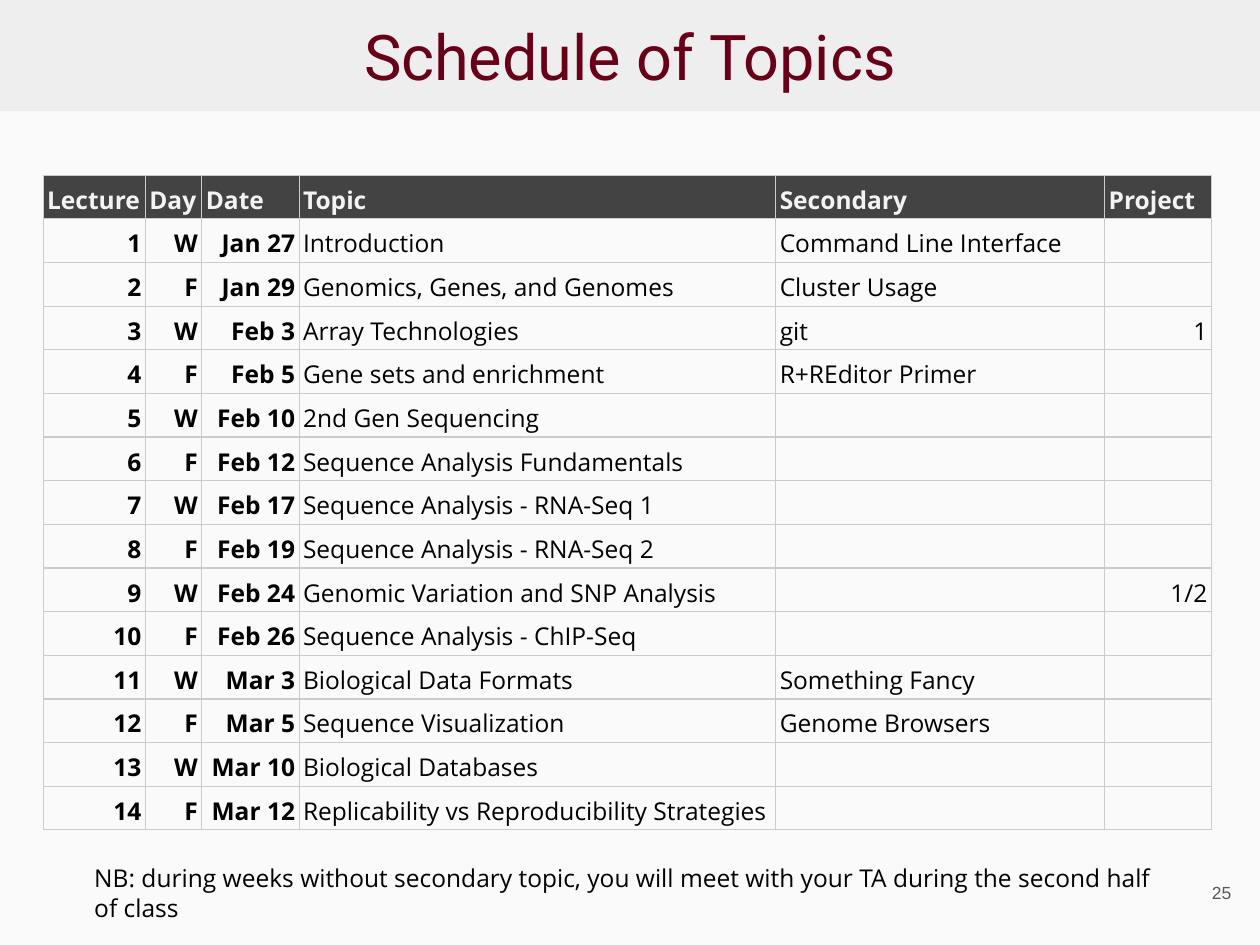
"""Build the course slide that lists the schedule of topics."""

from typing import NamedTuple

from pptx import Presentation
from pptx.dml.color import RGBColor
from pptx.enum.text import MSO_ANCHOR, PP_ALIGN
from pptx.oxml import parse_xml
from pptx.oxml.ns import nsdecls
from pptx.util import Cm, Pt

PAGE_COLOR = RGBColor(0xFA, 0xFA, 0xFA)
BANNER_COLOR = RGBColor(0xEE, 0xEE, 0xEE)
TITLE_COLOR = RGBColor(0x68, 0x00, 0x18)
HEADER_FILL = RGBColor(0x43, 0x43, 0x43)
HEADER_TEXT = RGBColor(0xF3, 0xF3, 0xF3)
BORDER_COLOR = RGBColor(0xCC, 0xCC, 0xCC)
NUMBER_COLOR = RGBColor(0x59, 0x59, 0x59)
BLACK = RGBColor(0, 0, 0)

BODY_FONT = "Open Sans"
ROW_HEIGHT = Cm(0.88)
DAYS = ("W", "F")


class Column(NamedTuple):
    heading: str
    width: float
    align: PP_ALIGN
    bold: bool


class Lecture(NamedTuple):
    date: str
    topic: str
    secondary: str = ""
    project: str = ""


class Style(NamedTuple):
    font: str
    size: float
    color: RGBColor
    align: PP_ALIGN = PP_ALIGN.LEFT
    bold: bool = False


COLUMNS = (
    Column("Lecture", 2.06, PP_ALIGN.RIGHT, True),
    Column("Day", 1.14, PP_ALIGN.RIGHT, True),
    Column("Date", 1.96, PP_ALIGN.RIGHT, True),
    Column("Topic", 9.61, PP_ALIGN.LEFT, False),
    Column("Secondary", 6.63, PP_ALIGN.LEFT, False),
    Column("Project", 2.15, PP_ALIGN.RIGHT, False),
)

LECTURES = (
    Lecture("Jan 27", "Introduction", "Command Line Interface"),
    Lecture("Jan 29", "Genomics, Genes, and Genomes", "Cluster Usage"),
    Lecture("Feb 3", "Array Technologies", "git", "1"),
    Lecture("Feb 5", "Gene sets and enrichment", "R+REditor Primer"),
    Lecture("Feb 10", "2nd Gen Sequencing"),
    Lecture("Feb 12", "Sequence Analysis Fundamentals"),
    Lecture("Feb 17", "Sequence Analysis - RNA-Seq 1"),
    Lecture("Feb 19", "Sequence Analysis - RNA-Seq 2"),
    Lecture("Feb 24", "Genomic Variation and SNP Analysis", project="1/2"),
    Lecture("Feb 26", "Sequence Analysis - ChIP-Seq"),
    Lecture("Mar 3", "Biological Data Formats", "Something Fancy"),
    Lecture("Mar 5", "Sequence Visualization", "Genome Browsers"),
    Lecture("Mar 10", "Biological Databases"),
    Lecture("Mar 12", "Replicability vs Reproducibility Strategies"),
)


def write(frame, text: str, style: Style) -> None:
    frame.text = text
    para = frame.paragraphs[0]
    para.alignment = style.align
    for span in para.runs:
        span.font.name = style.font
        span.font.size = Pt(style.size)
        span.font.bold = style.bold
        span.font.color.rgb = style.color


def place(box, left: float, top: float, width: float, height: float) -> None:
    box.left, box.top, box.width, box.height = map(Cm, (left, top, width, height))


def set_frame(frame, anchor: MSO_ANCHOR) -> None:
    frame.word_wrap = True
    frame.vertical_anchor = anchor
    frame.margin_left = frame.margin_right = Cm(0.25)
    frame.margin_top = frame.margin_bottom = Cm(0.25)


def add_title(page, text: str) -> None:
    title = page.shapes.title
    place(title, 0, 0, 25.4, 2.24)
    title.fill.solid()
    title.fill.fore_color.rgb = BANNER_COLOR
    set_frame(title.text_frame, MSO_ANCHOR.MIDDLE)
    write(title.text_frame, text, Style("Roboto", 36, TITLE_COLOR, PP_ALIGN.CENTER))


def add_text(page, text: str, bounds: tuple, anchor: MSO_ANCHOR, style: Style) -> None:
    box = page.shapes.add_textbox(*map(Cm, bounds))
    set_frame(box.text_frame, anchor)
    write(box.text_frame, text, style)


def set_borders(cell) -> None:
    properties = cell._tc.get_or_add_tcPr()
    for side in ("lnL", "lnR", "lnT", "lnB"):
        properties.append(parse_xml(
            f'<a:{side} {nsdecls("a")} w="{Pt(0.75)}"><a:solidFill>'
            f'<a:srgbClr val="{BORDER_COLOR}"/></a:solidFill></a:{side}>'
        ))


def fill_cell(cell, text: str, style: Style) -> None:
    cell.vertical_anchor = MSO_ANCHOR.BOTTOM
    cell.margin_left = cell.margin_right = Cm(0.08)
    cell.margin_top = cell.margin_bottom = Cm(0.05)
    set_borders(cell)
    if text:
        write(cell.text_frame, text, style)
        cell.text_frame.paragraphs[0].line_spacing = 1.15


def add_schedule(page) -> None:
    row_count = len(LECTURES) + 1
    width = Cm(sum(column.width for column in COLUMNS))
    frame = page.shapes.add_table(
        row_count, len(COLUMNS), Cm(0.87), Cm(3.53), width, ROW_HEIGHT * row_count
    )
    table = frame.table
    table.horz_banding = False
    for row in table.rows:
        row.height = ROW_HEIGHT
    for index, column in enumerate(COLUMNS):
        table.columns[index].width = Cm(column.width)
        heading = table.cell(0, index)
        fill_cell(heading, column.heading, Style(BODY_FONT, 14, HEADER_TEXT, bold=True))
        heading.fill.solid()
        heading.fill.fore_color.rgb = HEADER_FILL
    for number, lecture in enumerate(LECTURES, start=1):
        values = (str(number), DAYS[(number - 1) % len(DAYS)], *lecture)
        for index, (column, value) in enumerate(zip(COLUMNS, values)):
            cell = table.cell(number, index)
            fill_cell(cell, value, Style(BODY_FONT, 14, BLACK, column.align, column.bold))
            cell.fill.background()


def main() -> None:
    deck = Presentation()
    deck.slide_width, deck.slide_height = Cm(25.4), Cm(19.05)
    page = deck.slides.add_slide(deck.slide_layouts[5])
    page.background.fill.solid()
    page.background.fill.fore_color.rgb = PAGE_COLOR
    add_title(page, "Schedule of Topics")
    add_text(page, "25", (23.55, 17.27, 1.52, 1.45), MSO_ANCHOR.MIDDLE,
             Style("Arial", 10, NUMBER_COLOR, PP_ALIGN.RIGHT))
    add_schedule(page)
    add_text(page, "NB: during weeks without secondary topic, you will meet with "
             "your TA during the second half of class",
             (1.65, 17.15, 22.1, 1.7), MSO_ANCHOR.TOP, Style(BODY_FONT, 14, BLACK))
    deck.save("out.pptx")


if __name__ == "__main__":
    main()
